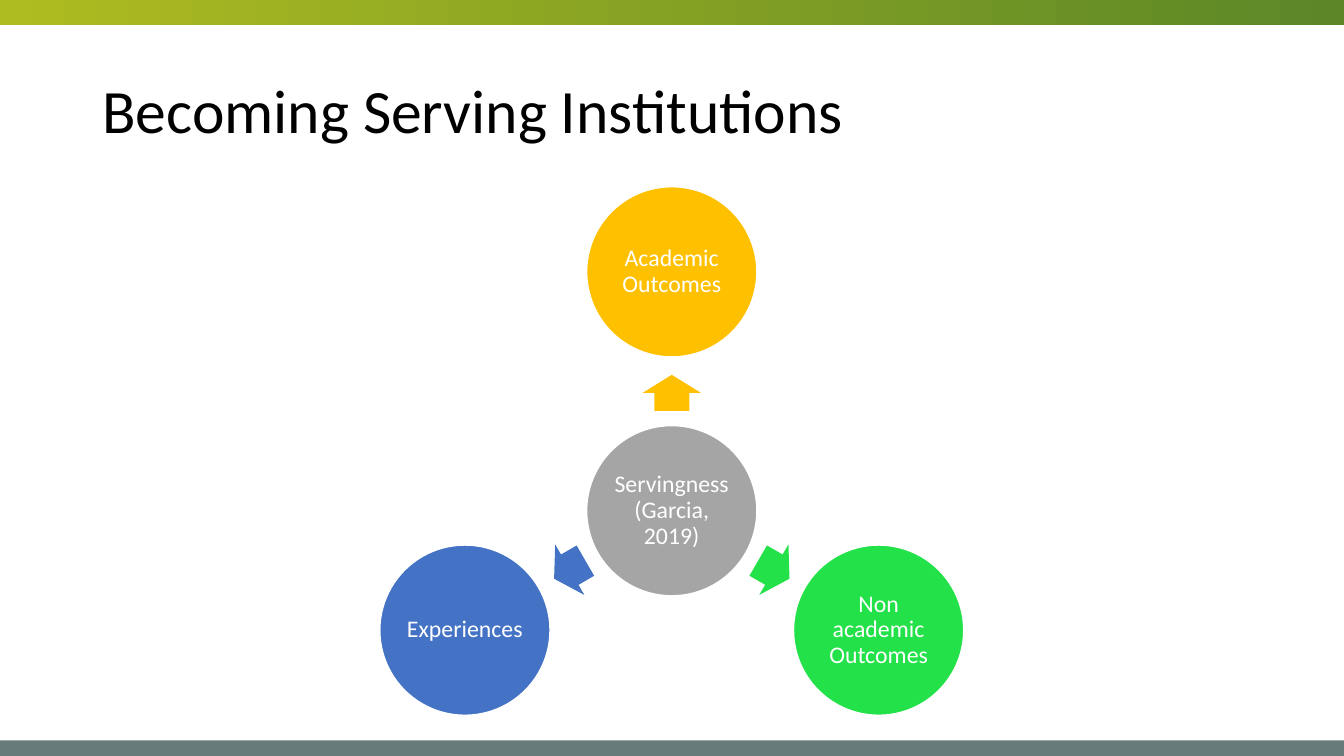
"""Build a slide with a hub circle and three outcomes radiating from it."""
from math import cos, radians, sin

from pptx import Presentation
from pptx.dml.color import RGBColor
from pptx.enum.shapes import MSO_SHAPE
from pptx.enum.text import MSO_ANCHOR, PP_ALIGN
from pptx.util import Cm, Pt

RECTANGLE, OVAL, ARROW = MSO_SHAPE.RECTANGLE, MSO_SHAPE.OVAL, MSO_SHAPE.RIGHT_ARROW
MIDDLE = MSO_ANCHOR.MIDDLE
LEFT, CENTER = PP_ALIGN.LEFT, PP_ALIGN.CENTER

FONT = "Calibri"
WHITE = "FFFFFF"
PAGE_WIDTH, PAGE_HEIGHT = 33.87, 19.05
HUB_X, HUB_Y = 16.93, 12.87
DIAMETER = 4.29
ORBIT = 6.02
ARROW_ORBIT = 2.97
ARROW_WIDTH, ARROW_HEIGHT = 0.91, 1.47
OUTCOMES = [
    ("Academic Outcomes", "FFC000", 270),
    ("Non academic Outcomes", "23E148", 30),
    ("Experiences", "4472C4", 150),
]


def color(value):
    """Return the colour for a hex string."""
    return RGBColor.from_string(value)


def add_block(page, kind, left, top, width, height, fill=None):
    """Add a shape without shadow or outline, filled if a colour is given."""
    block = page.shapes.add_shape(kind, Cm(left), Cm(top), Cm(width), Cm(height))
    block.shadow.inherit = False
    block.line.fill.background()
    if fill:
        block.fill.solid()
        block.fill.fore_color.rgb = color(fill)
    return block


def set_text(frame, text, size, ink, align):
    """Write one vertically centred paragraph."""
    frame.word_wrap = True
    frame.vertical_anchor = MIDDLE
    para = frame.paragraphs[0]
    para.text = text
    para.alignment = align
    para.line_spacing = 0.9
    para.font.name = FONT
    para.font.size = Pt(size)
    para.font.color.rgb = color(ink)


def add_bands(page):
    """Add the gradient band at the top and the plain band at the bottom."""
    top_band = add_block(page, RECTANGLE, 0, 0, PAGE_WIDTH, 0.63)
    top_band.fill.gradient()
    top_band.fill.gradient_angle = 0
    for stop, value in zip(top_band.fill.gradient_stops, ("AFBC21", "5B8727")):
        stop.color.rgb = color(value)
    add_block(page, RECTANGLE, 0, 18.66, PAGE_WIDTH, 0.39, "667B7A")


def add_title(page, text):
    """Place and format the title placeholder."""
    title = page.shapes.title
    title.left, title.top = Cm(2.33), Cm(1.02)
    title.width, title.height = Cm(29.21), Cm(3.68)
    set_text(title.text_frame, text, 44, "000000", LEFT)


def add_circle(page, text, fill, center_x, center_y):
    """Add a labelled circle around a centre point."""
    circle = add_block(page, OVAL, center_x - DIAMETER / 2, center_y - DIAMETER / 2,
                       DIAMETER, DIAMETER, fill)
    circle.line.color.rgb = color(WHITE)
    circle.line.width = Pt(1)
    frame = circle.text_frame
    frame.margin_left = frame.margin_right = Cm(0.05)
    frame.margin_top = frame.margin_bottom = Cm(0.05)
    set_text(frame, text, 17, WHITE, CENTER)


def from_hub(angle, distance):
    """Return the point at a clockwise angle and distance from the hub."""
    turn = radians(angle)
    return HUB_X + distance * cos(turn), HUB_Y + distance * sin(turn)


def add_arrow(page, fill, angle):
    """Add an arrow that points outwards from the hub."""
    center_x, center_y = from_hub(angle, ARROW_ORBIT)
    arrow = add_block(page, ARROW, center_x - ARROW_WIDTH / 2,
                      center_y - ARROW_HEIGHT / 2, ARROW_WIDTH, ARROW_HEIGHT, fill)
    arrow.adjustments[0] = 0.6
    arrow.adjustments[1] = 0.5
    arrow.rotation = angle


def main():
    """Build and save the deck."""
    deck = Presentation()
    deck.slide_width, deck.slide_height = Cm(PAGE_WIDTH), Cm(PAGE_HEIGHT)
    page = deck.slides.add_slide(deck.slide_layouts.get_by_name("Title Only"))
    add_bands(page)
    add_title(page, "Becoming Serving Institutions")
    add_circle(page, "Servingness (Garcia, 2019)", "A5A5A5", HUB_X, HUB_Y)
    for text, fill, angle in OUTCOMES:
        add_arrow(page, fill, angle)
        add_circle(page, text, fill, *from_hub(angle, ORBIT))
    deck.save("out.pptx")


if __name__ == "__main__":
    main()
